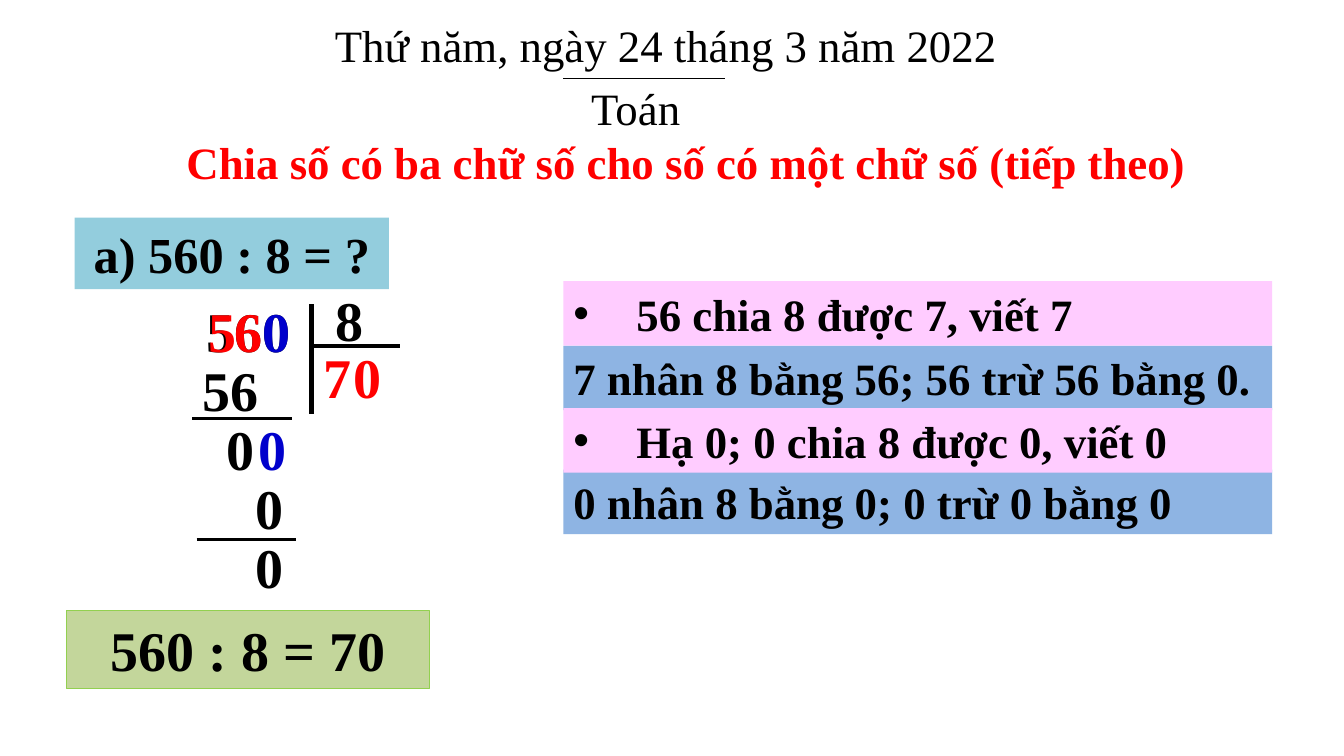
from dataclasses import dataclass

from lxml.etree import SubElement
from pptx import Presentation
from pptx.dml.color import RGBColor
from pptx.enum.shapes import MSO_CONNECTOR as CONN, MSO_SHAPE as SHAPE
from pptx.enum.text import MSO_ANCHOR as ANCHOR, MSO_AUTO_SIZE as FIT, PP_ALIGN as ALIGN
from pptx.oxml.ns import qn
from pptx.util import Pt


@dataclass(frozen=True)
class Theme:
    font: str = "Times New Roman"
    black: str = "000000"
    red: str = "FF0000"
    blue: str = "0000CC"
    question: str = "93CDDD"
    pink: str = "FFCCFF"
    sky: str = "8EB4E3"
    green: str = "C3D69B"
    green_line: str = "92D050"
    body: int = 32
    question_size: int = 36
    digit: int = 40


T = Theme()


def rgb(value):
    return RGBColor.from_string(value)


def write(sp, text, size=T.body, color=T.black, bold=True, align=ALIGN.LEFT,
          inset=(7.2, 3.6), bullet=False):
    """Put one formatted paragraph into a shape."""
    tf = sp.text_frame
    tf.word_wrap = True
    tf.auto_size = FIT.SHAPE_TO_FIT_TEXT
    tf.vertical_anchor = ANCHOR.TOP
    tf.margin_left = tf.margin_right = Pt(inset[0])
    tf.margin_top = tf.margin_bottom = Pt(inset[1])
    p = tf.paragraphs[0]
    p.alignment = align
    r = p.add_run()
    r.text = text
    r.font.name = T.font
    r.font.size = Pt(size)
    r.font.bold = bold
    r.font.color.rgb = rgb(color)
    if bullet:
        pPr = p._p.get_or_add_pPr()
        pPr.set("marL", str(Pt(45)))
        pPr.set("indent", str(-Pt(45)))
        SubElement(pPr, qn("a:buFont"), typeface="Arial")
        SubElement(pPr, qn("a:buChar"), char="•")


def add_label(s, text, x, y, w, h, **fmt):
    write(s.shapes.add_textbox(Pt(x), Pt(y), Pt(w), Pt(h)), text, **fmt)


def add_box(s, text, x, y, w, h, fill, line=None, **fmt):
    sp = s.shapes.add_shape(SHAPE.RECTANGLE, Pt(x), Pt(y), Pt(w), Pt(h))
    sp.shadow.inherit = False
    sp.fill.solid()
    sp.fill.fore_color.rgb = rgb(fill)
    if line:
        sp.line.color.rgb = rgb(line)
        sp.line.width = Pt(0.75)
    else:
        sp.line.fill.background()
    write(sp, text, **fmt)


def add_rule(s, x1, y1, x2, y2, width):
    cxn = s.shapes.add_connector(CONN.STRAIGHT, Pt(x1), Pt(y1), Pt(x2), Pt(y2))
    cxn.line.color.rgb = rgb(T.black)
    cxn.line.width = Pt(width)
    SubElement(cxn._element.spPr, qn("a:effectLst"))


def add_digits(s, text, x, y, color=T.black):
    add_label(s, text, x, y, 16 + 22 * len(text), 55.6, size=T.digit, color=color)


def add_heading(s):
    add_label(s, "Chia số có ba chữ số cho số có một chữ số (tiếp theo)",
              123.8, 91.4, 831.6, 36, color=T.red, inset=(9.4, 5))
    for text, x, y in (("Thứ năm, ngày 24 tháng 3 năm 2022", -4.3, 9.4),
                       ("Toán", -25.9, 54)):
        add_label(s, text, x, y, 960, 28, bold=False, align=ALIGN.CENTER)
    add_rule(s, 402.5, 56.2, 517.7, 56.2, 0.75)


def add_division(s):
    # Division bracket and subtraction lines
    add_rule(s, 222.5, 217.4, 222.5, 295.9, 3)
    add_rule(s, 222.5, 247, 285.8, 247, 3)
    add_rule(s, 137.5, 298.8, 208.8, 298.8, 2)
    add_rule(s, 140.4, 385.2, 211.7, 385.2, 2)

    # Divisor and quotient
    add_digits(s, "8", 232.6, 200.2)
    add_digits(s, "7", 223.9, 241.2, T.red)
    add_digits(s, "0", 245.5, 241.2, T.red)

    # Working rows: each holds text, left edge and colour
    rows = (
        (("560", 140.4, T.black), ("5", 141.8, T.red),
         ("6", 160.6, T.red), ("0", 180.7, T.blue)),
        (("56", 137.5, T.black),),
        (("0", 154.8, T.black), ("0", 177.8, T.blue)),
        (("0", 175.7, T.black),),
        (("0", 175.7, T.black),),
    )
    for i, row in enumerate(rows):
        for text, x, color in row:
            add_digits(s, text, x, 208 + 42.2 * i, color)


def add_steps(s):
    # The later boxes overlap the earlier ones
    steps = (
        ("56 chia 8 được 7, viết 7", 200.9, True),
        ("0 nhân 8 bằng 0; 0 trừ 0 bằng 0", 335.5, False),
        ("7 nhân 8 bằng 56; 56 trừ 56 bằng 0.", 247, False),
        ("Hạ 0; 0 chia 8 được 0, viết 0", 291.6, True),
    )
    for text, y, bullet in steps:
        add_box(s, text, 402.5, y, 506.2, 46, T.pink if bullet else T.sky,
                bullet=bullet)


def main():
    prs = Presentation()
    prs.slide_width, prs.slide_height = Pt(960), Pt(540)
    s = prs.slides.add_slide(prs.slide_layouts[6])

    add_box(s, "a) 560 : 8 = ?", 53.3, 155.5, 224.6, 51, T.question,
            size=T.question_size, align=ALIGN.CENTER)
    add_division(s)
    add_steps(s)
    add_box(s, "560 : 8 = 70", 47.5, 436.3, 259.2, 55.6, T.green, T.green_line,
            size=T.digit, align=ALIGN.CENTER)
    add_heading(s)

    prs.save("out.pptx")


if __name__ == "__main__":
    main()
